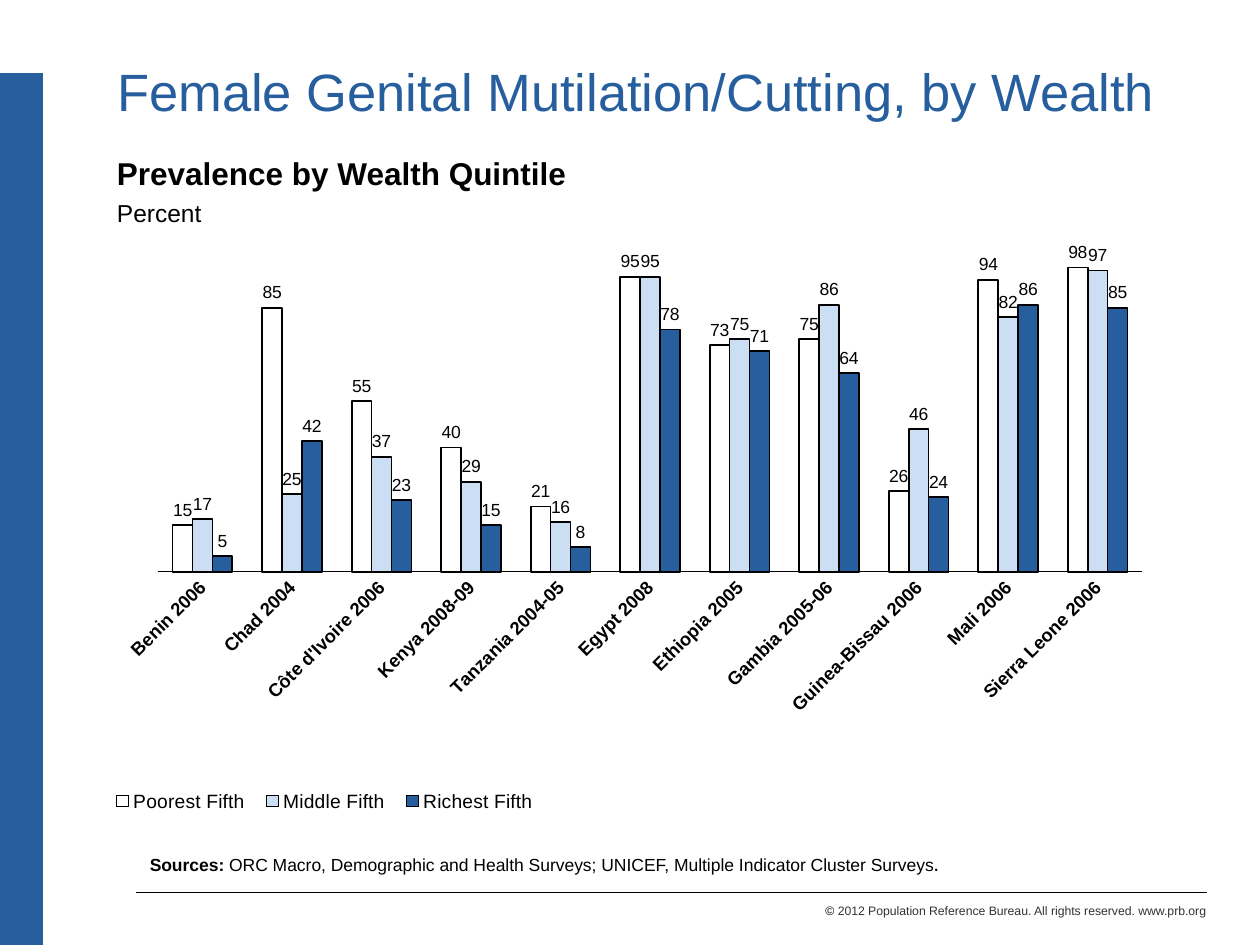
from lxml import etree
from pptx import Presentation
from pptx.chart.data import CategoryChartData
from pptx.dml.color import RGBColor
from pptx.enum.chart import XL_CHART_TYPE, XL_LABEL_POSITION, XL_LEGEND_POSITION, XL_TICK_MARK
from pptx.enum.shapes import MSO_CONNECTOR
from pptx.enum.text import MSO_ANCHOR, PP_ALIGN
from pptx.oxml.ns import qn
from pptx.util import Inches, Pt

COLUMNS = XL_CHART_TYPE.COLUMN_CLUSTERED
OUTSIDE = XL_LABEL_POSITION.OUTSIDE_END
BOTTOM = XL_LEGEND_POSITION.BOTTOM
NO_TICK = XL_TICK_MARK.NONE
STRAIGHT = MSO_CONNECTOR.STRAIGHT
TOP = MSO_ANCHOR.TOP
LEFT, RIGHT = PP_ALIGN.LEFT, PP_ALIGN.RIGHT

FONT = "Arial"
BLUE, PALE, WHITE, BLACK, GRAY = "265E9E", "CCDEF3", "FFFFFF", "000000", "333333"

COUNTRIES = [
    "Benin 2006", "Chad 2004", "Côte d'Ivoire 2006", "Kenya 2008-09",
    "Tanzania 2004-05", "Egypt 2008", "Ethiopia 2005", "Gambia 2005-06",
    "Guinea-Bissau 2006", "Mali 2006", "Sierra Leone 2006",
]
QUINTILES = [
    ("Poorest Fifth", WHITE, [15, 85, 55, 40, 21, 95, 73, 75, 26, 94, 98]),
    ("Middle Fifth", PALE, [17, 25, 37, 29, 16, 95, 75, 86, 46, 82, 97]),
    ("Richest Fifth", BLUE, [5, 42, 23, 15, 8, 78, 71, 64, 24, 86, 85]),
]


def rgb(color):
    return RGBColor.from_string(color)


def set_font(font, size, color=BLACK, bold=False):
    font.name = FONT
    font.size = Pt(size)
    font.bold = bold
    font.color.rgb = rgb(color)


def add_run(p, text, size, color=BLACK, bold=False):
    r = p.add_run()
    r.text = text
    set_font(r.font, size, color, bold)


def add_text(s, box, paragraphs, align=LEFT, space=0):
    tf = s.shapes.add_textbox(*map(Inches, box)).text_frame
    tf.word_wrap = True
    for i, runs in enumerate(paragraphs):
        p = tf.add_paragraph() if i else tf.paragraphs[0]
        p.alignment = align
        if i:
            p.space_before = Pt(space)
        for run in runs:
            add_run(p, *run)


def add_line(s, x1, y1, x2, y2, color, width):
    line = s.shapes.add_connector(STRAIGHT, *map(Inches, (x1, y1, x2, y2)))
    line.line.color.rgb = rgb(color)
    line.line.width = Pt(width)
    etree.SubElement(line._element.spPr, qn("a:effectLst"))


def set_layout(parent, index, box, inner=False):
    for old in parent.findall(qn("c:layout")):
        parent.remove(old)
    layout = etree.Element(qn("c:layout"))
    manual = etree.SubElement(layout, qn("c:manualLayout"))
    settings = [("layoutTarget", "inner")] if inner else []
    settings += [("xMode", "edge"), ("yMode", "edge")]
    settings += zip("xywh", map(str, box))
    for tag, value in settings:
        etree.SubElement(manual, qn("c:" + tag)).set("val", value)
    parent.insert(index, layout)


def add_title(s, box):
    title = s.shapes.title
    title.left, title.top, title.width, title.height = map(Inches, box)
    tf = title.text_frame
    tf.vertical_anchor = TOP
    p = tf.paragraphs[0]
    p.alignment = LEFT
    add_run(p, "Female Genital Mutilation/Cutting, by Wealth", 30, BLUE)


def add_prevalence_chart(s, box):
    data = CategoryChartData()
    data.categories = COUNTRIES
    for name, _, values in QUINTILES:
        data.add_series(name, values)
    chart = s.shapes.add_chart(COLUMNS, *map(Inches, box), data).chart
    set_font(chart.font, 14, bold=True)
    chart.has_title = False

    plot = chart.plots[0]
    plot.gap_width = 150
    plot.overlap = 0
    plot.vary_by_categories = False
    for series, (_, color, _) in zip(plot.series, QUINTILES):
        series.format.fill.solid()
        series.format.fill.fore_color.rgb = rgb(color)
        series.format.line.color.rgb = rgb(BLACK)
        series.format.line.width = Pt(1)
        labels = series.data_labels
        labels.show_value = True
        labels.position = OUTSIDE
        set_font(labels.font, 10)

    countries = chart.category_axis
    countries.major_tick_mark = countries.minor_tick_mark = NO_TICK
    countries.format.line.color.rgb = rgb(BLACK)
    countries.format.line.width = Pt(0.25)
    set_font(countries.tick_labels.font, 10.5, bold=True)
    countries._element.find(qn("c:txPr")).find(qn("a:bodyPr")).set("rot", "-2700000")

    percent = chart.value_axis
    percent.minimum_scale, percent.maximum_scale = 0, 120
    percent.has_major_gridlines = False
    percent.visible = False

    chart.has_legend = True
    legend = chart.legend
    legend.position = BOTTOM
    legend.include_in_layout = False
    set_font(legend.font, 11)
    set_layout(legend._element, 1, (0.01, 0.95, 0.42, 0.05))
    plot_area = chart._chartSpace.chart.plotArea
    set_layout(plot_area, 0, (0.063, 0.022, 0.926, 0.588), inner=True)


def add_footer(s, left, top, width):
    add_line(s, left, top, left + width, top, BLACK, 0.5)
    add_text(s, (left + 3.17, top + 0.04, width - 3.08, 0.22), [[
        ("© ", 7),
        ("2012 Population Reference Bureau. All rights reserved. www.prb.org", 7, GRAY),
    ]], RIGHT)


def main():
    prs = Presentation()
    prs.slide_width, prs.slide_height = Inches(10), Inches(7.5)
    s = prs.slides.add_slide(prs.slide_layouts[5])
    add_line(s, 0.17, 0.58, 0.17, 7.5, BLUE, 25)
    add_footer(s, 1.08, 7.08, 8.5)
    add_title(s, (0.83, 0.42, 8.46, 1.08))
    add_prevalence_chart(s, (0.72, 1.47, 8.44, 5.03))
    add_text(s, (0.83, 1.17, 8.5, 0.68), [
        [("Prevalence by Wealth Quintile", 18, BLACK, True)],
        [("Percent", 14)],
    ], space=4)
    add_text(s, (1.09, 6.7, 8.58, 0.3), [[
        ("Sources: ", 10, BLACK, True),
        ("ORC Macro, Demographic and Health Surveys; UNICEF, "
         "Multiple Indicator Cluster Surveys", 10),
        (".", 12),
    ]])
    prs.save("out.pptx")


if __name__ == "__main__":
    main()
